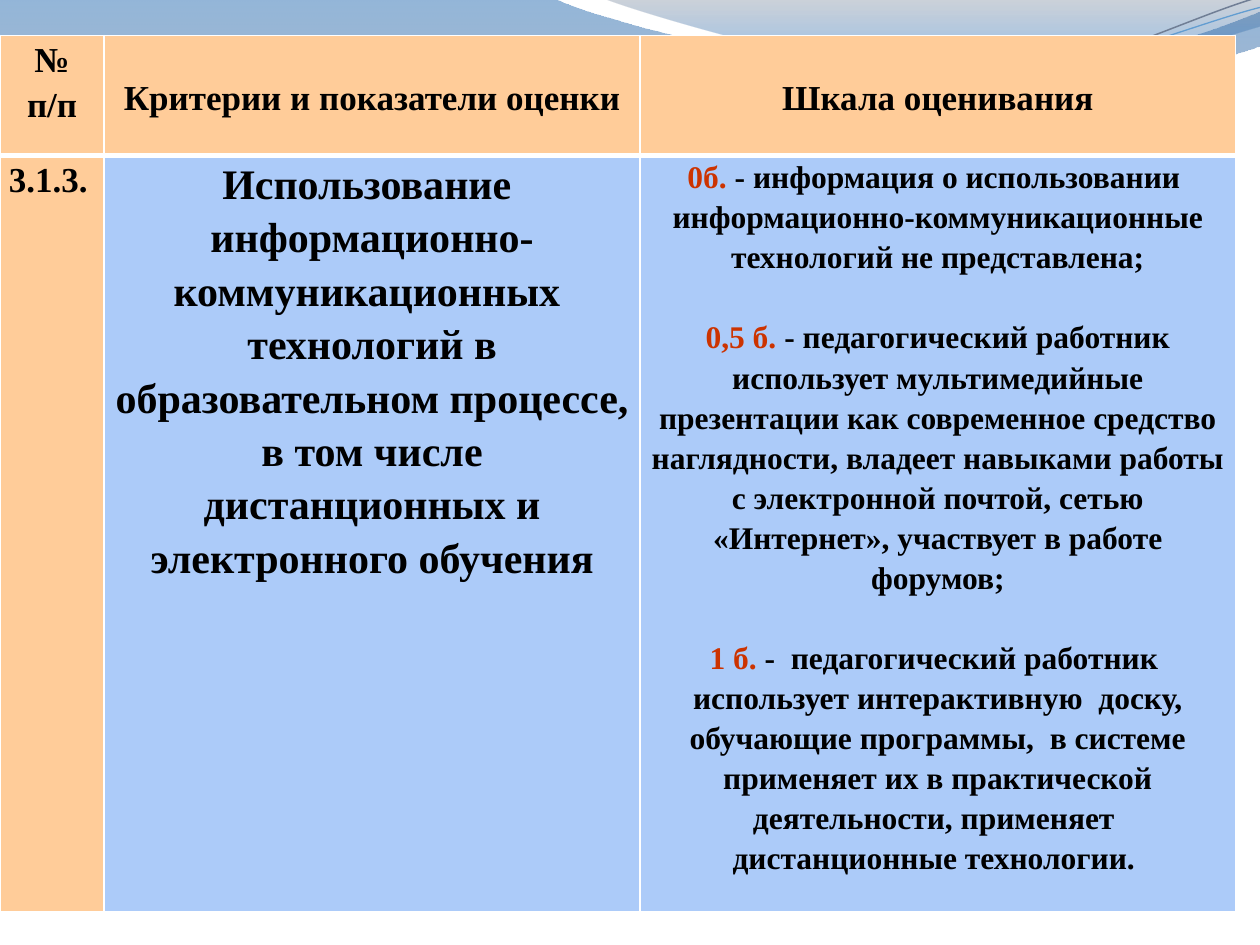
from lxml import etree
from pptx import Presentation
from pptx.dml.color import RGBColor
from pptx.enum.text import MSO_ANCHOR, PP_ALIGN
from pptx.oxml.ns import qn
from pptx.util import Cm, Pt

CENTER, LEFT = PP_ALIGN.CENTER, PP_ALIGN.LEFT
TOP, MIDDLE = MSO_ANCHOR.TOP, MSO_ANCHOR.MIDDLE
FONT = "Times New Roman"
COLORS = {
    "text": "000000", "score": "CC3300", "border": "FFFFFF",
    "header": "FFCC99", "body": "ACCBF9",
    "wave_start": "125EAA", "wave_end": "697FA4",
    "crest_start": "596982", "crest_end": "0670DA",
    "gray_line": "707E95", "blue_line": "629DD1",
}
LINE_ROTATION = 357.3

WAVE = [
    [(0, -0.03)], [(11.18, -0.03)],
    [(12.09, 0.43), (16.87, 1.6), (19.25, 1.6)],
    [(21.67, 1.6), (24.33, 0.66), (25.4, 0.23)],
    [(25.43, 0.91)],
    [(24.97, 1.12), (22.1, 1.93), (18.95, 1.91)],
    [(15.8, 1.91), (9.7, 0.71), (6.53, 0.86)],
    [(3.28, 0.89), (1.17, 2.11), (-0.03, 2.87)],
    [(0, -0.03)],
]
CREST = [
    [(12.17, -0.03)],
    [(12.93, 0.28), (17.32, 1.57), (19.53, 1.65)],
    [(21.74, 1.75), (24.41, 0.81), (25.4, 0.53)],
    [(25.4, 0)],
    [(12.17, -0.03)],
]
GRAY_LINE = [
    [(-0.05, 2.22)],
    [(1.19, 1.82), (4.02, 1.04), (7.05, 1.05)],
    [(10.05, 1.07), (15.02, 2.37), (18.08, 2.29)],
    [(21.13, 2.2), (23.87, 0.91), (25.41, 0.55)],
]
BLUE_LINE = [
    [(-0.04, 2.04)],
    [(1.16, 1.9), (4.18, 1.15), (7.2, 1.16)],
    [(10.25, 1.18), (15.13, 2.23), (18.18, 2.17)],
    [(21.21, 2.1), (23.93, 1.06), (25.45, 0.75)],
]

HEADERS = [["№", "п/п"], ["Критерии и показатели оценки"], ["Шкала оценивания"]]
CRITERION = (
    "Использование  информационно-\vкоммуникационных  технологий в "
    "образовательном процессе, в том числе дистанционных и электронного обучения"
)
SCALE = [
    ("0б.", " - информация о использовании  информационно-коммуникационные "
            "технологий не представлена;"),
    ("0,5 б.", " - педагогический работник использует мультимедийные презентации "
               "как современное средство наглядности, владеет навыками работы с "
               "электронной почтой, сетью «Интернет», участвует в работе форумов;"),
    ("1 б. ", "-  педагогический работник  использует интерактивную  доску, "
              "обучающие программы,  в системе применяет их в практической "
              "деятельности, применяет  дистанционные технологии. "),
]


def rgb(name):
    """Return the named colour."""
    return RGBColor.from_string(COLORS[name])


def add_outline(slide, segments, closed):
    """Draw a freeform; segments of three points become Bezier curves."""
    vertices = [(Cm(x), Cm(y)) for segment in segments for x, y in segment]
    builder = slide.shapes.build_freeform(*vertices[0])
    builder.add_line_segments(vertices[1:], close=closed)
    shape = builder.convert_to_shape()
    shape.shadow.inherit = False
    lines = iter(list(shape._element.iter(qn("a:lnTo"))))
    for segment in segments[1:]:
        steps = [next(lines) for _ in segment]
        if len(steps) == 3:
            curve = etree.Element(qn("a:cubicBezTo"))
            steps[0].addprevious(curve)
            for step in steps:
                curve.append(step[0])
                step.getparent().remove(step)
    return shape


def add_wave(slide, segments, stops):
    """Draw a filled band with a translucent vertical gradient."""
    shape = add_outline(slide, segments, True)
    shape.line.fill.background()
    shape.fill.gradient()
    shape.fill.gradient_angle = 270
    for stop, (position, color, alpha) in zip(shape.fill.gradient_stops, stops):
        stop.position = position
        stop.color.rgb = rgb(color)
        element = stop._gs.find(qn("a:srgbClr"))
        etree.SubElement(element, qn("a:alpha"), val=str(alpha * 1000))


def add_curve(slide, segments, color, width):
    """Draw an open curved line, slightly tilted."""
    shape = add_outline(slide, segments, False)
    shape.rotation = LINE_ROTATION
    shape.fill.background()
    shape.line.color.rgb = rgb(color)
    shape.line.width = Pt(width)


def set_borders(cell, top, bottom):
    """Give a cell its border lines, with widths in points."""
    properties = cell._tc.get_or_add_tcPr()
    for tag, width in (("lnL", 1), ("lnR", 1), ("lnT", top), ("lnB", bottom)):
        line = etree.SubElement(properties, qn(f"a:{tag}"), w=str(Pt(width)))
        fill = etree.SubElement(line, qn("a:solidFill"))
        etree.SubElement(fill, qn("a:srgbClr"), val=COLORS["border"])


def add_run(paragraph, text, size, color):
    """Add a bold run to a paragraph."""
    run = paragraph.add_run()
    run.text = text
    run.font.name = FONT
    run.font.size = Pt(size)
    run.font.bold = True
    run.font.color.rgb = rgb(color)


def fill_cell(cell, paragraphs, size, color, align=CENTER, anchor=TOP, gap=0):
    """Fill a cell with paragraphs, each a list of text and colour pairs."""
    cell.fill.solid()
    cell.fill.fore_color.rgb = rgb(color)
    cell.margin_left = cell.margin_right = Cm(0.18)
    cell.margin_top = cell.margin_bottom = 0
    cell.vertical_anchor = anchor
    frame = cell.text_frame
    for index, runs in enumerate(paragraphs):
        paragraph = frame.add_paragraph() if index else frame.paragraphs[0]
        paragraph.alignment = align
        paragraph.line_spacing = 1.15
        if index and gap:
            paragraph.space_before = Pt(gap)
        for text, run_color in runs:
            for part_index, part in enumerate(text.split("\v")):
                if part_index:
                    paragraph.add_line_break()
                add_run(paragraph, part, size, run_color)


def add_criteria_table(slide):
    """Add the table of criteria and scores."""
    widths, heights = (2.1, 10.8, 12.01), (2.41, 15.24)
    table = slide.shapes.add_table(
        2, 3, 0, Cm(0.72), Cm(sum(widths)), Cm(sum(heights))).table
    table.first_row = table.horz_banding = False
    for column, width in zip(table.columns, widths):
        column.width = Cm(width)
    for row, height, (top, bottom) in zip(table.rows, heights, ((1, 3), (3, 1))):
        row.height = Cm(height)
        for cell in row.cells:
            set_borders(cell, top, bottom)
    for column, lines in enumerate(HEADERS):
        fill_cell(table.cell(0, column), [[(line, "text")] for line in lines], 20,
                  "header", anchor=MIDDLE if column else TOP)
    fill_cell(table.cell(1, 0), [[("3.1.3.", "text")]], 20, "header", align=LEFT)
    fill_cell(table.cell(1, 1), [[(CRITERION, "text")]], 24, "body")
    scores = [[(score, "score"), (meaning, "text")] for score, meaning in SCALE]
    fill_cell(table.cell(1, 2), scores, 18, "body", gap=22.9)


def main():
    """Build the slide and save it."""
    presentation = Presentation()
    presentation.slide_width, presentation.slide_height = Cm(25.4), Cm(19.05)
    slide = presentation.slides.add_slide(presentation.slide_layouts[6])
    add_wave(slide, WAVE, [(0, "wave_start", 45), (1, "wave_end", 55)])
    add_wave(slide, CREST, [(0, "crest_start", 30), (0.8, "crest_end", 45)])
    add_curve(slide, GRAY_LINE, "gray_line", 0.85)
    add_curve(slide, BLUE_LINE, "blue_line", 0.75)
    add_criteria_table(slide)
    presentation.save("out.pptx")


if __name__ == "__main__":
    main()
